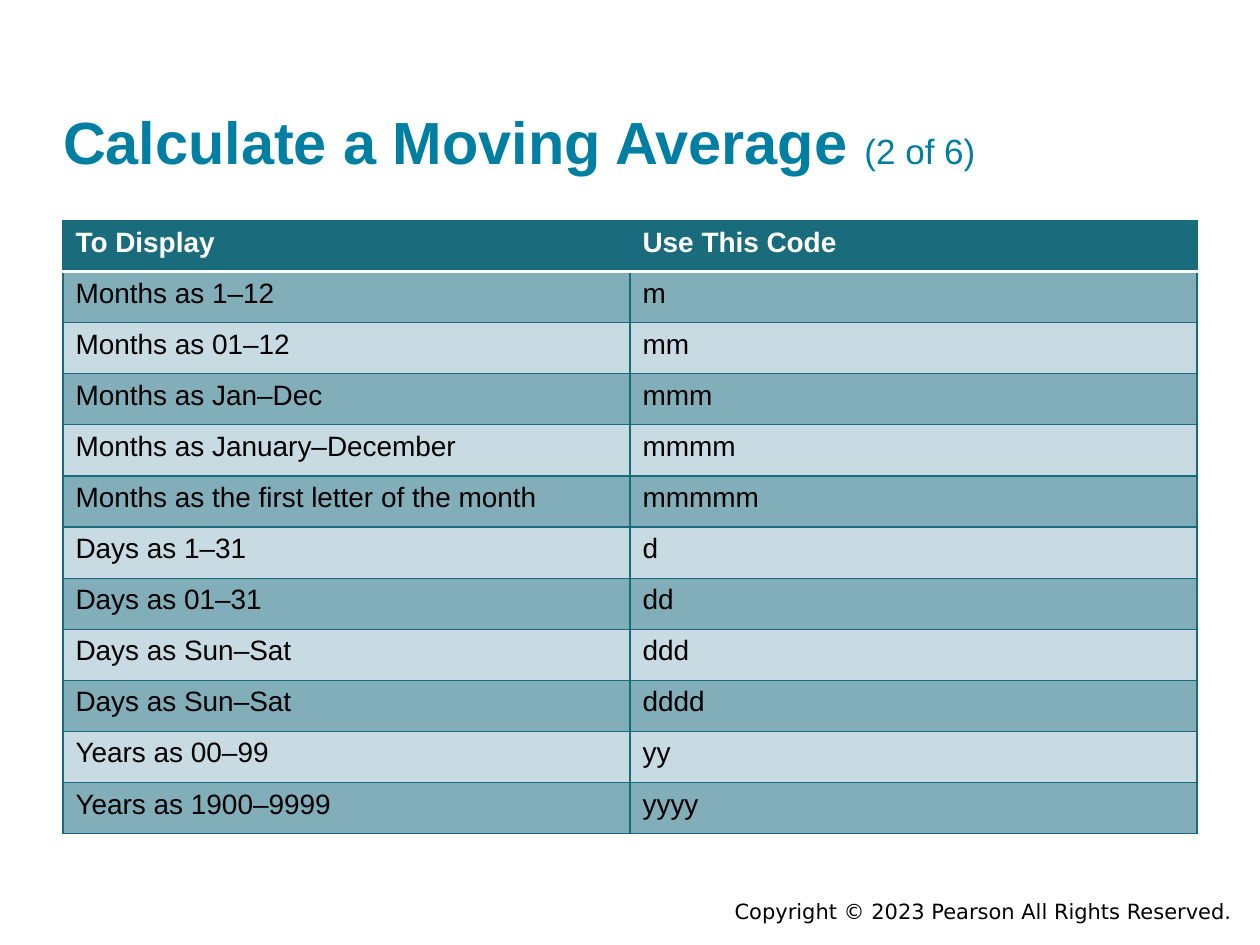
from dataclasses import dataclass
from lxml import etree
from pptx import Presentation
from pptx.dml.color import RGBColor
from pptx.enum.text import MSO_ANCHOR, MSO_AUTO_SIZE, PP_ALIGN
from pptx.oxml.ns import qn
from pptx.util import Pt

LEFT, RIGHT = PP_ALIGN.LEFT, PP_ALIGN.RIGHT
BOTTOM, FIXED = MSO_ANCHOR.BOTTOM, MSO_AUTO_SIZE.NONE
TITLE_ONLY = 5


@dataclass(frozen=True)
class Theme:
    face: str = "Arial"
    foot_face: str = "DejaVu Sans"
    title: str = "007FA3"
    head: str = "1A6C7C"
    rule: str = "176B7C"
    dark: str = "82AEBA"
    light: str = "C8DBE3"
    ink: str = "000000"
    white: str = "FFFFFF"
    title_size: float = 34
    part_size: float = 20
    cell_size: float = 16
    foot_size: float = 12
    thin: float = 0.75
    thick: float = 2


THEME = Theme()

ROWS = [
    ("To Display", "Use This Code"),
    ("Months as 1–12", "m"),
    ("Months as 01–12", "mm"),
    ("Months as Jan–Dec", "mmm"),
    ("Months as January–December", "mmmm"),
    ("Months as the first letter of the month", "mmmmm"),
    ("Days as 1–31", "d"),
    ("Days as 01–31", "dd"),
    ("Days as Sun–Sat", "ddd"),
    ("Days as Sun–Sat", "dddd"),
    ("Years as 00–99", "yy"),
    ("Years as 1900–9999", "yyyy"),
]


def set_all(item, values):
    for name, value in values.items():
        setattr(item, name, value)


def add_run(para, text, size, color, bold=False, face=THEME.face):
    run = para.add_run()
    run.text = text
    set_all(run.font, {"name": face, "size": Pt(size), "bold": bold})
    run.font.color.rgb = RGBColor.from_string(color)


def add_edges(cell, edges):
    """Put cell borders, in schema order, ahead of the fill."""
    props = cell._tc.get_or_add_tcPr()
    for spot, (side, (color, width)) in enumerate(edges.items()):
        line = etree.Element(qn(f"a:ln{side}"), w=str(Pt(width)))
        fill = etree.SubElement(line, qn("a:solidFill"))
        etree.SubElement(fill, qn("a:srgbClr"), val=color)
        props.insert(spot, line)


def add_title(slide, box, text, part):
    title = slide.shapes.title
    left, top, width, height = box
    set_all(title, {"left": Pt(left), "top": Pt(top),
                    "width": Pt(width), "height": Pt(height)})
    frame = title.text_frame
    set_all(frame, {"margin_left": 0, "margin_right": 0, "margin_top": 0,
                    "margin_bottom": 0, "vertical_anchor": BOTTOM,
                    "word_wrap": True, "auto_size": FIXED})
    para = frame.paragraphs[0]
    para.alignment = LEFT
    add_run(para, text, THEME.title_size, THEME.title, bold=True)
    add_run(para, part, THEME.part_size, THEME.title)


def add_codes(slide, box, rows):
    left, top, width, height = box
    count = len(rows[0])
    table = slide.shapes.add_table(len(rows), count, Pt(left), Pt(top),
                                   Pt(width), Pt(height)).table
    for col in table.columns:
        col.width = Pt(width / count)
    thin = (THEME.rule, THEME.thin)
    thick = (THEME.white, THEME.thick)
    for r, row in enumerate(rows):
        table.rows[r].height = Pt(height / len(rows))
        head = r == 0
        # Header, then alternating dark and light bands
        back = THEME.head if head else THEME.dark if r % 2 else THEME.light
        for c, text in enumerate(row):
            cell = table.cell(r, c)
            cell.fill.solid()
            cell.fill.fore_color.rgb = RGBColor.from_string(back)
            add_edges(cell, {"L": thin, "R": thin,
                             "T": thick if r == 1 else thin,
                             "B": thick if head else thin})
            add_run(cell.text_frame.paragraphs[0], text, THEME.cell_size,
                    THEME.white if head else THEME.ink, bold=head)


def add_foot(slide, box, text):
    frame = slide.shapes.add_textbox(*map(Pt, box)).text_frame
    frame.word_wrap = True
    para = frame.paragraphs[0]
    para.alignment = RIGHT
    add_run(para, text, THEME.foot_size, THEME.ink, face=THEME.foot_face)


def main():
    deck = Presentation()
    set_all(deck, {"slide_width": Pt(720), "slide_height": Pt(540)})
    slide = deck.slides.add_slide(deck.slide_layouts[TITLE_ONLY])
    # Copyright line, heading and table of codes
    add_foot(slide, (228, 510, 483, 21.6),
             "Copyright © 2023 Pearson All Rights Reserved.")
    add_title(slide, (36, 14.4, 648, 86.4),
              "Calculate a Moving Average ", "(2 of 6)")
    add_codes(slide, (36, 126, 648, 350.4), ROWS)
    deck.save("out.pptx")


if __name__ == "__main__":
    main()
